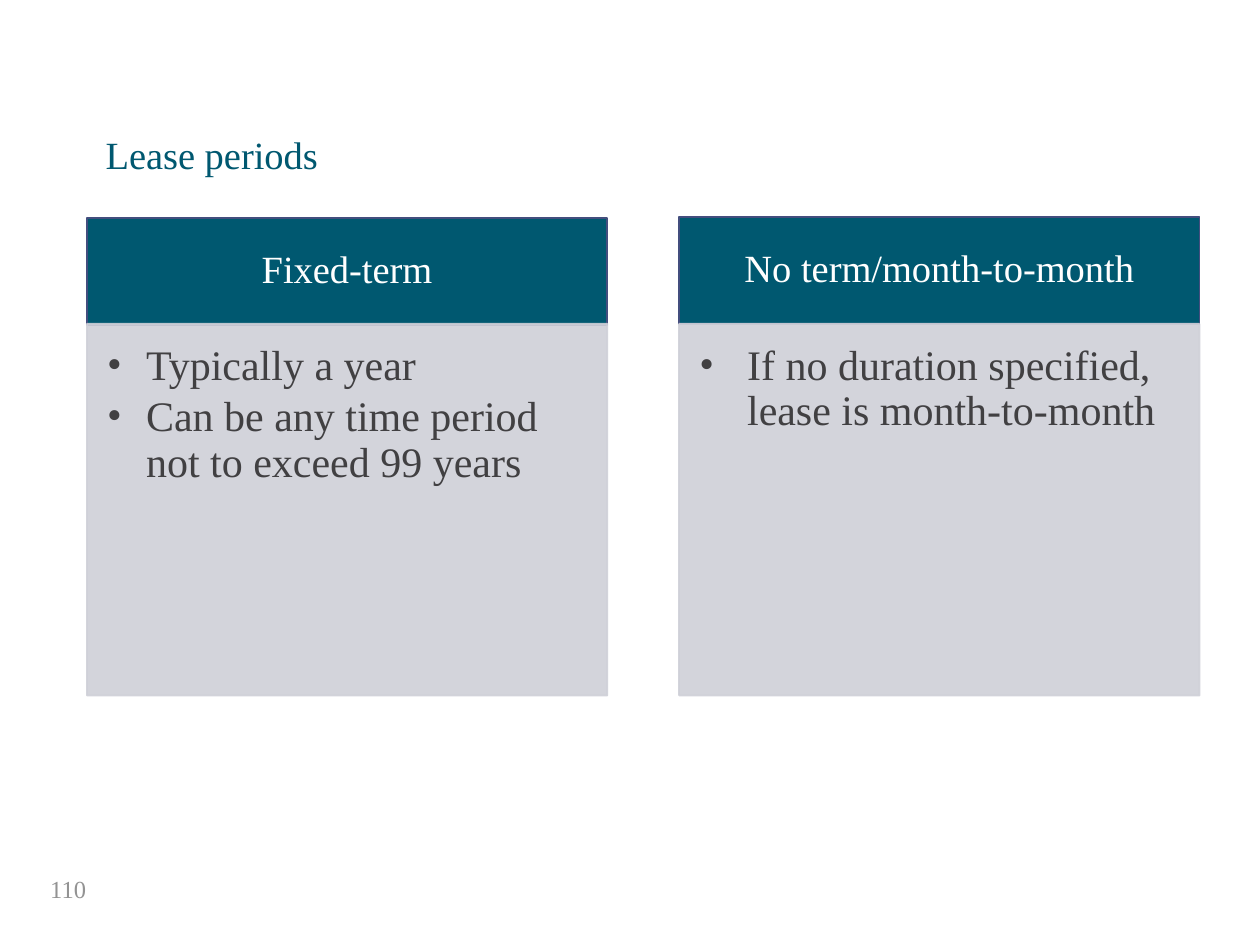
import pptx
import pptx.util
import pptx.dml.color
import pptx.enum.shapes
import pptx.enum.text
from lxml import etree
from pptx.oxml.ns import qn
from pptx.util import Inches

FONT = "Times New Roman"
TEAL, GRAY, INK = "005870", "CFD0D8", "414042"
CARDS = [
    {"left": 0.69, "top": 1.73, "indent": 0.31, "heading": "Fixed-term",
     "points": ["Typically a year", "Can be any time period not to exceed 99 years"]},
    {"left": 5.39, "top": 1.72, "indent": 0.38, "heading": "No term/month-to-month",
     "points": ["If no duration specified, lease is month-to-month"]},
]
CARD_WIDTH, HEADER_HEIGHT, BODY_TOP, BODY_HEIGHT = 4.13, 0.85, 2.57, 2.95
LABELS = [
    ("Lease periods", (0.74, 1.03, 4.26, 0.46), 22, TEAL, "TOP", 0.9),
    ("110", (0.3, 6.85, 2.25, 0.4), 14, "939393", "MIDDLE", 1.0),
]


def color(value):
    return pptx.dml.color.RGBColor.from_string(value)


def set_opacity(fill_parent, percent):
    for swatch in fill_parent.iterchildren(qn("a:solidFill")):
        etree.SubElement(swatch[0], qn("a:alpha"), val=str(percent * 1000))


def add_panel(page, place, fill, line, opacity=None):
    panel = page.shapes.add_shape(
        pptx.enum.shapes.MSO_SHAPE.RECTANGLE, *map(Inches, place))
    panel.shadow.inherit = False
    panel.fill.solid()
    panel.fill.fore_color.rgb = color(fill)
    panel.line.color.rgb = color(line)
    panel.line.width = pptx.util.Pt(1)
    if opacity:
        properties = panel.fill._xPr
        set_opacity(properties, opacity)
        set_opacity(properties.find(qn("a:ln")), opacity)
    return panel


def write(box, lines, size, ink, anchor, insets=(0.1, 0.05, 0.1, 0.05),
          align="LEFT", spacing=0.9, after=0, indent=None):
    frame = box.text_frame
    frame.word_wrap = True
    frame.vertical_anchor = pptx.enum.text.MSO_ANCHOR[anchor]
    (frame.margin_left, frame.margin_top,
     frame.margin_right, frame.margin_bottom) = map(Inches, insets)
    for index, line in enumerate(lines):
        para = frame.add_paragraph() if index else frame.paragraphs[0]
        para.alignment = pptx.enum.text.PP_ALIGN[align]
        para.line_spacing = spacing
        para.space_after = pptx.util.Pt(after)
        if indent:
            layout = para._p.get_or_add_pPr()
            layout.set("marL", str(Inches(indent)))
            layout.set("indent", str(-Inches(indent)))
            etree.SubElement(layout, qn("a:buFont"), typeface=FONT)
            etree.SubElement(layout, qn("a:buChar"), char="•")
        span = para.add_run()
        span.text = line
        span.font.name = FONT
        span.font.size = pptx.util.Pt(size)
        span.font.color.rgb = color(ink)


def add_card(page, card):
    header = add_panel(
        page, (card["left"], card["top"], CARD_WIDTH, HEADER_HEIGHT), TEAL, "434E7E")
    write(header, [card["heading"]], 22, "FFFFFF", "MIDDLE",
          insets=(0.1, 0.06, 0.1, 0.06), align="CENTER")
    body = add_panel(
        page, (card["left"], BODY_TOP, CARD_WIDTH, BODY_HEIGHT), GRAY, GRAY, 90)
    write(body, card["points"], 24, INK, "TOP",
          insets=(0.16, 0.16, 0.22, 0.24), after=3.6, indent=card["indent"])


def main():
    deck = pptx.Presentation()
    deck.slide_width, deck.slide_height = Inches(10), Inches(7.5)
    page = deck.slides.add_slide(deck.slide_layouts[6])
    for card in CARDS:
        add_card(page, card)
    for text, place, size, ink, anchor, spacing in LABELS:
        box = page.shapes.add_textbox(*map(Inches, place))
        write(box, [text], size, ink, anchor, spacing=spacing)
    deck.save("out.pptx")


if __name__ == "__main__":
    main()
